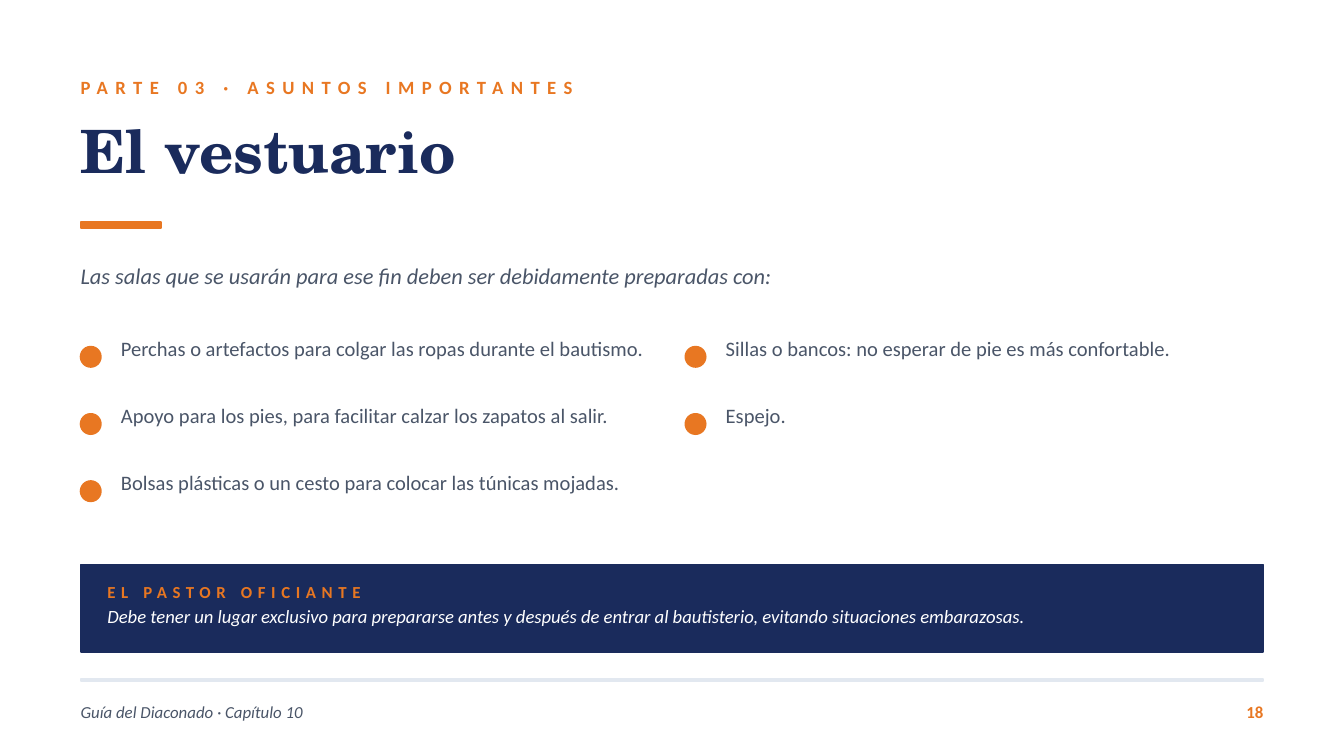
from dataclasses import dataclass

from pptx import Presentation
from pptx import util as u
from pptx.dml.color import RGBColor
from pptx.enum import shapes, text

# The grid has 100 columns across the slide; rows are as tall as columns are wide.
COLUMNS, ROWS = 100, 56.25
CELL = u.Inches(0.1)
MARGIN = 6
CONTENT = COLUMNS - 2 * MARGIN

ORANGE, NAVY, SLATE, MIST, WHITE = "E87722", "1A2B5C", "4A5568", "E2E8F0", "FFFFFF"
RECTANGLE, OVAL = shapes.MSO_SHAPE.RECTANGLE, shapes.MSO_SHAPE.OVAL
TOP, MIDDLE = text.MSO_ANCHOR.TOP, text.MSO_ANCHOR.MIDDLE
LEFT, RIGHT = text.PP_ALIGN.LEFT, text.PP_ALIGN.RIGHT


@dataclass(frozen=True)
class Area:
    """A rectangle in grid columns and rows."""
    column: float
    row: float
    width: float
    height: float

    def lengths(self) -> list[u.Emu]:
        cells = (self.column, self.row, self.width, self.height)
        return [u.Emu(round(count * CELL)) for count in cells]


@dataclass(frozen=True)
class Style:
    size: float
    color: str
    font: str = "Calibri"
    bold: bool = False
    italic: bool = False
    tracking: float = 0
    anchor: text.MSO_ANCHOR = TOP
    align: text.PP_ALIGN = LEFT


KICKER = Style(10, ORANGE, bold=True, tracking=4, anchor=MIDDLE)
TITLE = Style(32, NAVY, font="TeX Gyre Schola", bold=True)
INTRO = Style(12, SLATE, italic=True)
ITEM = Style(11, SLATE)
NOTE_LABEL = Style(9, ORANGE, bold=True, tracking=3, anchor=MIDDLE)
NOTE = Style(10, WHITE, italic=True)
FOOTER = Style(9, SLATE, italic=True, anchor=MIDDLE)
PAGE_NUMBER = Style(9, ORANGE, bold=True, anchor=MIDDLE, align=RIGHT)

ITEMS = (
    "Perchas o artefactos para colgar las ropas durante el bautismo.",
    "Sillas o bancos: no esperar de pie es más confortable.",
    "Apoyo para los pies, para facilitar calzar los zapatos al salir.",
    "Espejo.",
    "Bolsas plásticas o un cesto para colocar las túnicas mojadas.",
)


def rgb(color: str) -> RGBColor:
    return RGBColor.from_string(color)


def add_block(page, area: Area, color: str, preset=RECTANGLE) -> None:
    block = page.shapes.add_shape(preset, *area.lengths())
    block.shadow.inherit = False
    block.fill.solid()
    block.fill.fore_color.rgb = rgb(color)
    block.line.color.rgb = rgb(color)
    block.line.width = u.Pt(1)


def add_text(page, area: Area, words: str, style: Style) -> None:
    frame = page.shapes.add_textbox(*area.lengths()).text_frame
    frame.word_wrap = True
    frame.vertical_anchor = style.anchor
    frame.margin_left = frame.margin_right = 0
    frame.margin_top = frame.margin_bottom = 0
    para = frame.paragraphs[0]
    para.alignment = style.align
    span = para.add_run()
    span.text = words
    if style.tracking:
        span._r.get_or_add_rPr().set("spc", str(round(style.tracking * 100)))
    font = para.font
    font.name, font.size = style.font, u.Pt(style.size)
    font.bold, font.italic = style.bold, style.italic
    font.color.rgb = rgb(style.color)


def add_items(page, items: tuple[str, ...]) -> None:
    """Lay bulleted items out row by row in two columns."""
    for index, words in enumerate(items):
        line, side = divmod(index, 2)
        column, row = MARGIN + 45 * side, 25 + 5 * line
        add_block(page, Area(column, row + 0.8, 1.5, 1.5), ORANGE, OVAL)
        add_text(page, Area(column + 3, row, 41, 4.5), words, ITEM)


def main() -> None:
    deck = Presentation()
    deck.slide_width = u.Emu(COLUMNS * CELL)
    deck.slide_height = u.Emu(round(ROWS * CELL))
    page = deck.slides.add_slide(deck.slide_layouts[6])

    add_text(page, Area(MARGIN, 5, 70, 3), "PARTE 03 · ASUNTOS IMPORTANTES", KICKER)
    add_text(page, Area(MARGIN, 8.5, 90, 7), "El vestuario", TITLE)
    add_block(page, Area(MARGIN, 16.5, 6, 0.5), ORANGE)
    add_text(page, Area(MARGIN, 19.5, 90, 4),
             "Las salas que se usarán para ese fin deben ser debidamente preparadas con:", INTRO)
    add_items(page, ITEMS)

    add_block(page, Area(MARGIN, 42, CONTENT, 6.5), NAVY)
    add_text(page, Area(MARGIN + 2, 42.8, 40, 2.5), "EL PASTOR OFICIANTE", NOTE_LABEL)
    add_text(page, Area(MARGIN + 2, 45, CONTENT - 4, 3),
             "Debe tener un lugar exclusivo para prepararse antes y después de entrar "
             "al bautisterio, evitando situaciones embarazosas.", NOTE)

    add_block(page, Area(MARGIN, 50.5, CONTENT, 0.2), MIST)
    add_text(page, Area(MARGIN, 51.5, 60, 3), "Guía del Diaconado · Capítulo 10", FOOTER)
    add_text(page, Area(COLUMNS - MARGIN - 5, 51.5, 5, 3), "18", PAGE_NUMBER)
    deck.save("out.pptx")


if __name__ == "__main__":
    main()
